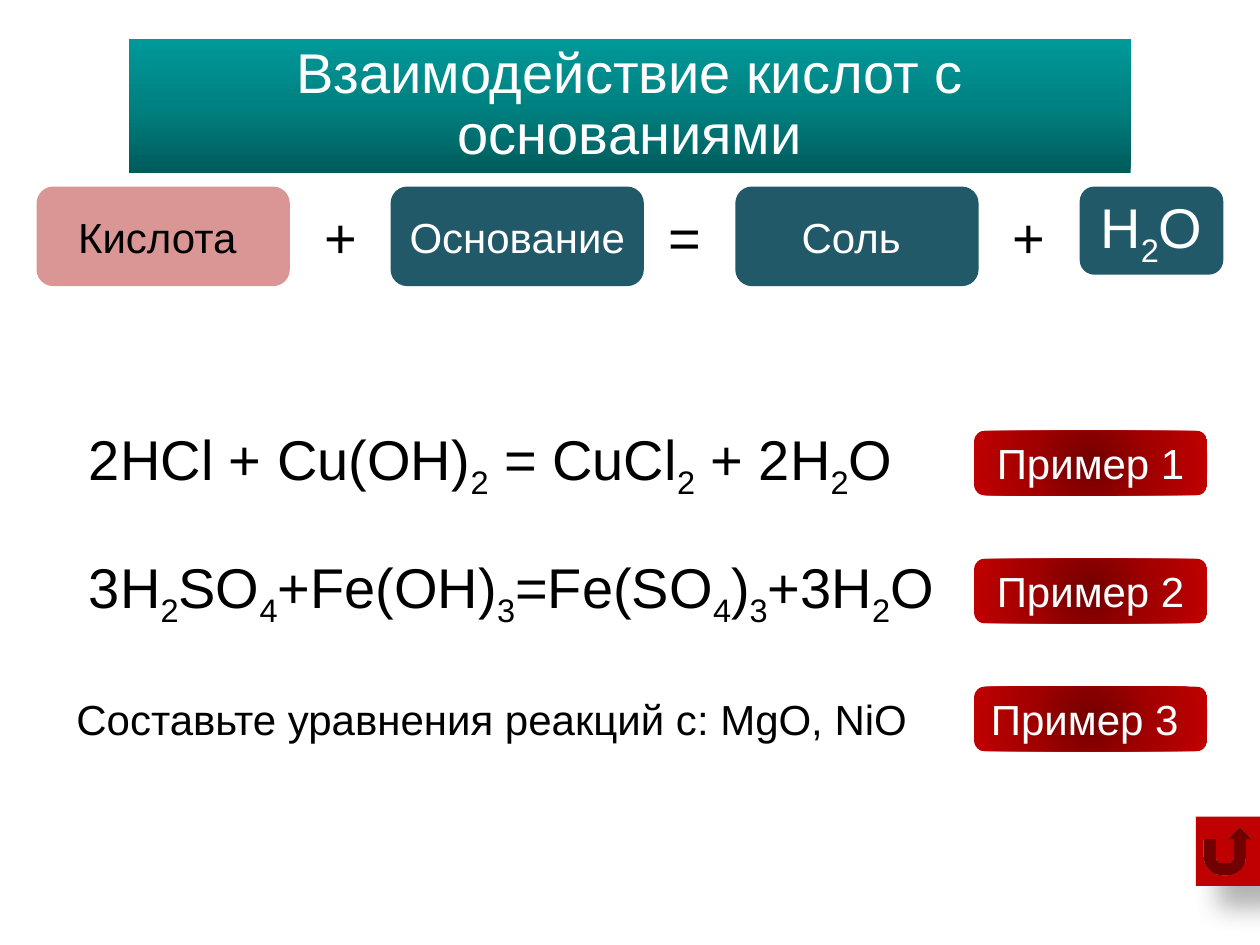
from typing import NamedTuple, Optional

from lxml.etree import SubElement
from pptx import Presentation
from pptx.dml.color import RGBColor
from pptx.enum.shapes import MSO_SHAPE
from pptx.enum.text import MSO_ANCHOR, PP_ALIGN
from pptx.oxml.ns import qn
from pptx.util import Pt

BLACK = RGBColor(0x00, 0x00, 0x00)
WHITE = RGBColor(0xFF, 0xFF, 0xFF)
PINK = RGBColor(0xD9, 0x96, 0x94)
PETROL = RGBColor(0x21, 0x59, 0x68)
RED = RGBColor(0xC0, 0x00, 0x00)
TEAL_STOPS = (RGBColor(0x00, 0x5B, 0x5B), RGBColor(0x00, 0x81, 0x81), RGBColor(0x00, 0x99, 0x99))
RED_STOPS = (RGBColor(0x72, 0x00, 0x00), RGBColor(0xA2, 0x00, 0x00), RED)

FONT = "Arial"
LARGE, SMALL = 32, 24
SCHEME_TOP, BOX_HEIGHT = 106.6, 56.9
ROW_TOP, ROW_PITCH = 236.2, 73.1
BUTTON_LEFT, BUTTON_WIDTH, BUTTON_HEIGHT = 556.6, 133.2, 36.8


class Term(NamedTuple):
    text: str
    left: float
    width: float
    fill: Optional[RGBColor] = None
    color: RGBColor = BLACK
    size: float = LARGE
    height: float = BOX_HEIGHT


class Example(NamedTuple):
    task: str
    left: float
    width: float
    size: float
    button: str


SCHEME = (
    Term("Кислота ", 20.9, 144.7, PINK, size=SMALL),
    Term("+", 166.3, 56.9),
    Term("=", 362.9, 56.9),
    Term("Основание", 223.2, 144.7, PETROL, WHITE, SMALL),
    Term("Соль ", 420.2, 139, PETROL, WHITE, SMALL),
    Term("+", 559.4, 56.9),
    Term("H_2O", 617, 82.1, PETROL, WHITE, height=50.4),
)
EXAMPLES = (
    Example("2HCl + Cu(OH)_2 = CuCl_2 + 2H_2O", 41, 481.7, LARGE, "Пример 1"),
    Example("3H_2SO_4+Fe(OH)_3=Fe(SO_4)_3+3H_2O", 41, 513.4, LARGE, "Пример 2"),
    Example("Составьте уравнения реакций с: MgO, NiO", 33.8, 496.1, SMALL, "Пример 3 "),
)


def add_box(slide, left: float, top: float, width: float, height: float,
            fill: Optional[RGBColor] = None, kind=MSO_SHAPE.ROUNDED_RECTANGLE):
    box = slide.shapes.add_shape(kind, Pt(left), Pt(top), Pt(width), Pt(height))
    box.shadow.inherit = False
    box.line.fill.background()
    if fill is None:
        box.fill.background()
    else:
        box.fill.solid()
        box.fill.fore_color.rgb = fill
    return box


def fill_gradient(box, stops: tuple, angle: Optional[int] = None) -> None:
    """Blend evenly spaced stops along the angle, or outwards from the centre without one."""
    properties = box.fill._xPr
    box.fill.background()
    no_fill = properties.find(qn("a:noFill"))
    gradient = properties.makeelement(qn("a:gradFill"), {"rotWithShape": "1"})
    properties.replace(no_fill, gradient)
    stop_list = SubElement(gradient, qn("a:gsLst"))
    for index, color in enumerate(stops):
        position = index * 100000 // (len(stops) - 1)
        stop = SubElement(stop_list, qn("a:gs"), pos=str(position))
        SubElement(stop, qn("a:srgbClr"), val=str(color))
    if angle is not None:
        SubElement(gradient, qn("a:lin"), ang=str(angle * 60000), scaled="0")
    else:
        center = SubElement(gradient, qn("a:path"), path="circle")
        SubElement(center, qn("a:fillToRect"), l="50000", t="50000", r="50000", b="50000")


def write(box, text: str, *, size: float, color: RGBColor = BLACK,
          align=PP_ALIGN.CENTER, line_spacing: Optional[float] = None) -> None:
    """Fill the box with text, in which an underscore lowers the next character."""
    frame = box.text_frame
    frame.word_wrap = True
    frame.vertical_anchor = MSO_ANCHOR.MIDDLE
    paragraph = frame.paragraphs[0]
    paragraph.alignment = align
    if line_spacing:
        paragraph.line_spacing = line_spacing

    def add_run(part: str, lowered: bool = False) -> None:
        run = paragraph.add_run()
        run.text = part
        run.font.name = FONT
        run.font.size = Pt(size)
        run.font.color.rgb = color
        if lowered:
            run.font._element.set("baseline", "-25000")

    start, *rest = text.split("_")
    add_run(start)
    for part in rest:
        add_run(part[0], lowered=True)
        if part[1:]:
            add_run(part[1:])


def add_term(slide, term: Term) -> None:
    box = add_box(slide, term.left, SCHEME_TOP, term.width, term.height, term.fill)
    write(box, term.text, size=term.size, color=term.color)


def add_example(slide, example: Example, top: float) -> None:
    task = add_box(slide, example.left, top, example.width, BOX_HEIGHT)
    write(task, example.task, size=example.size, align=PP_ALIGN.LEFT)
    button_top = top + (BOX_HEIGHT - BUTTON_HEIGHT) / 2
    button = add_box(slide, BUTTON_LEFT, button_top, BUTTON_WIDTH, BUTTON_HEIGHT)
    fill_gradient(button, RED_STOPS)
    write(button, example.button, size=SMALL, color=WHITE)


def add_return_button(slide) -> None:
    button = add_box(slide, 683.3, 466.6, 36.7, 39.6, RED, MSO_SHAPE.ACTION_BUTTON_RETURN)
    effects = button._element.spPr.find(qn("a:effectLst"))
    shadow = SubElement(effects, qn("a:outerShdw"), blurRad=str(Pt(15)), dist=str(Pt(18)),
                        dir=str(45 * 60000), algn="tl", rotWithShape="0")
    shade = SubElement(shadow, qn("a:srgbClr"), val=str(BLACK))
    SubElement(shade, qn("a:alpha"), val="30000")


def main() -> None:
    deck = Presentation()
    deck.slide_width, deck.slide_height = Pt(720), Pt(540)
    slide = deck.slides.add_slide(deck.slide_layouts[6])

    title = add_box(slide, 73.6, 22.3, 572.6, 76.4, kind=MSO_SHAPE.RECTANGLE)
    fill_gradient(title, TEAL_STOPS, angle=270)
    write(title, "Взаимодействие кислот с основаниями", size=LARGE, color=WHITE, line_spacing=0.9)

    for term in SCHEME:
        add_term(slide, term)
    for row, example in enumerate(EXAMPLES):
        add_example(slide, example, ROW_TOP + row * ROW_PITCH)
    add_return_button(slide)
    deck.save("out.pptx")


if __name__ == "__main__":
    main()
